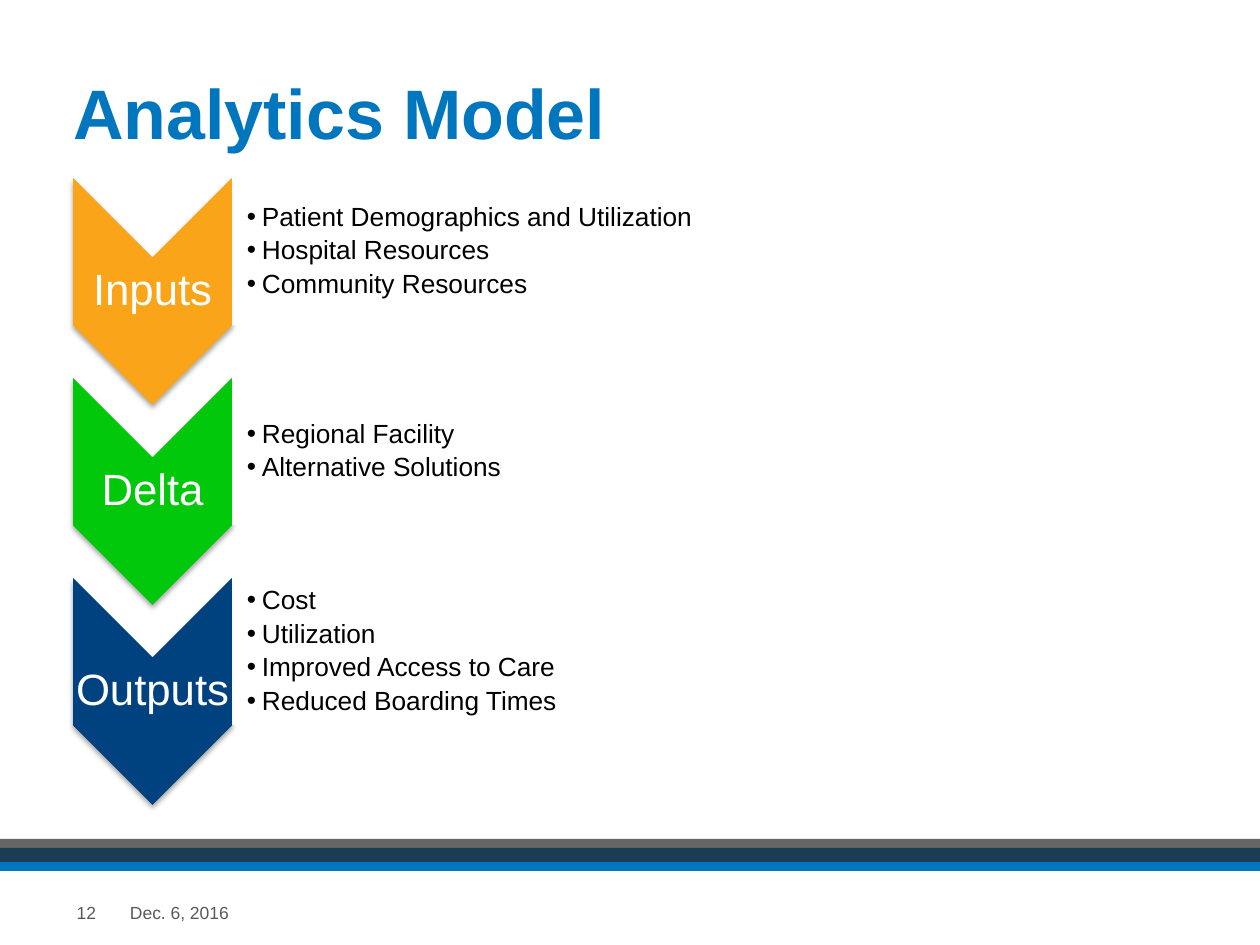
from lxml.etree import SubElement
from pptx import Presentation
from pptx.dml.color import RGBColor
from pptx.enum.shapes import MSO_SHAPE
from pptx.enum.text import MSO_ANCHOR, PP_ALIGN
from pptx.oxml.ns import qn
from pptx.util import Pt

SCALE = 914400 / 126
STAGES = [
    ("Inputs", "FAA41A", ["Patient Demographics and Utilization",
                          "Hospital Resources", "Community Resources"]),
    ("Delta", "02C80C", ["Regional Facility", "Alternative Solutions"]),
    ("Outputs", "004280", ["Cost", "Utilization", "Improved Access to Care",
                           "Reduced Boarding Times"]),
]


def px(length):
    return round(length * SCALE)


def color(hex_value):
    return RGBColor.from_string(hex_value)


def add_block(slide, preset, box, fill, opacity=100):
    block = slide.shapes.add_shape(preset, *map(px, box))
    block.shadow.inherit = False
    block.fill.solid()
    block.fill.fore_color.rgb = color(fill)
    block.line.fill.background()
    if opacity < 100:
        tint = block.fill._xPr.find(qn("a:solidFill"))[0]
        SubElement(tint, qn("a:alpha"), val=str(opacity * 1000))
    return block


def add_turned_block(slide, preset, box, fill, opacity=100):
    left, top, width, height = box
    shift = (width - height) / 2
    turned = (left + shift, top - shift, height, width)
    block = add_block(slide, preset, turned, fill, opacity)
    block.rotation = 90
    return block


def add_shadow(block):
    effects = block._element.spPr.find(qn("a:effectLst"))
    shadow = SubElement(effects, qn("a:outerShdw"), blurRad=str(Pt(3.1)),
                        dist=str(Pt(1.8)), dir="5400000", rotWithShape="0")
    black = SubElement(shadow, qn("a:srgbClr"), val="000000")
    SubElement(black, qn("a:alpha"), val="35000")


def add_bullet(paragraph):
    properties = paragraph._p.get_or_add_pPr()
    properties.set("marL", str(px(15)))
    properties.set("indent", str(px(-15)))
    SubElement(properties, qn("a:buFont"), typeface="Arial")
    SubElement(properties, qn("a:buChar"), char="•")


def add_text(slide, box, lines, size, ink, insets=(0, 0, 0, 0), bold=False,
             align=PP_ALIGN.LEFT, anchor=MSO_ANCHOR.MIDDLE, spacing=1,
             after=0, bulleted=False):
    frame = slide.shapes.add_textbox(*map(px, box)).text_frame
    frame.word_wrap = True
    frame.vertical_anchor = anchor
    (frame.margin_left, frame.margin_top,
     frame.margin_right, frame.margin_bottom) = map(px, insets)
    for index, line in enumerate(lines):
        paragraph = frame.add_paragraph() if index else frame.paragraphs[0]
        paragraph.text = line
        paragraph.alignment = align
        paragraph.line_spacing = spacing
        paragraph.space_after = Pt(after)
        if bulleted:
            add_bullet(paragraph)
        paragraph.font.name = "Arial"
        paragraph.font.size = Pt(size)
        paragraph.font.bold = bold
        paragraph.font.color.rgb = color(ink)


def add_stage(slide, box, label, fill, points):
    left, top, width, height = box
    arrow_width = 159
    arrow = add_turned_block(slide, MSO_SHAPE.CHEVRON,
                             (left, top, arrow_width, height), fill)
    add_shadow(arrow)
    add_text(slide, (left, top + 79, arrow_width, 68), [label], 25, "FFFFFF",
             insets=(2, 2, 2, 2), align=PP_ALIGN.CENTER, spacing=0.9)
    panel_left, panel_width = left + arrow_width, width - arrow_width
    add_turned_block(slide, MSO_SHAPE.ROUND_2_SAME_RECTANGLE,
                     (panel_left, top, panel_width, 147), "FFFFFF", 90)
    add_text(slide, (panel_left, top + 7, panel_width - 7, 133), points, 15,
             "000000", insets=(15, 1, 1, 1), spacing=0.9, after=3,
             bulleted=True)


def add_model(slide, box):
    left, top, width, height = box
    pitch, stage_height = 200, height - 400
    for row, stage in enumerate(STAGES):
        add_stage(slide, (left, top + row * pitch, width, stage_height), *stage)


def add_footer(slide, box):
    left, top, width, height = box
    add_block(slide, MSO_SHAPE.RECTANGLE, (left, top + 9, width, 23), "0076BE")
    add_block(slide, MSO_SHAPE.RECTANGLE, (left, top, width, 23), "262626", 70)
    caption_top = top + 60
    add_text(slide, (left + 118, caption_top, 582, 28), ["Dec. 6, 2016"], 10,
             "595959", insets=(12, 6, 12, 6))
    add_text(slide, (left + 31, caption_top, 77, 28), ["12"], 10,
             "595959", insets=(12, 6, 12, 6), align=PP_ALIGN.RIGHT)


def main():
    presentation = Presentation()
    presentation.slide_width = px(1260)
    presentation.slide_height = px(945)
    slide = presentation.slides.add_slide(presentation.slide_layouts[6])
    add_footer(slide, (0, 839, 1260, 106))
    add_text(slide, (73, 82, 1113, 132), ["Analytics Model"], 40, "0076BE",
             bold=True, anchor=MSO_ANCHOR.TOP, spacing=0.85)
    add_model(slide, (73, 178, 1125, 627))
    presentation.save("out.pptx")


if __name__ == "__main__":
    main()
